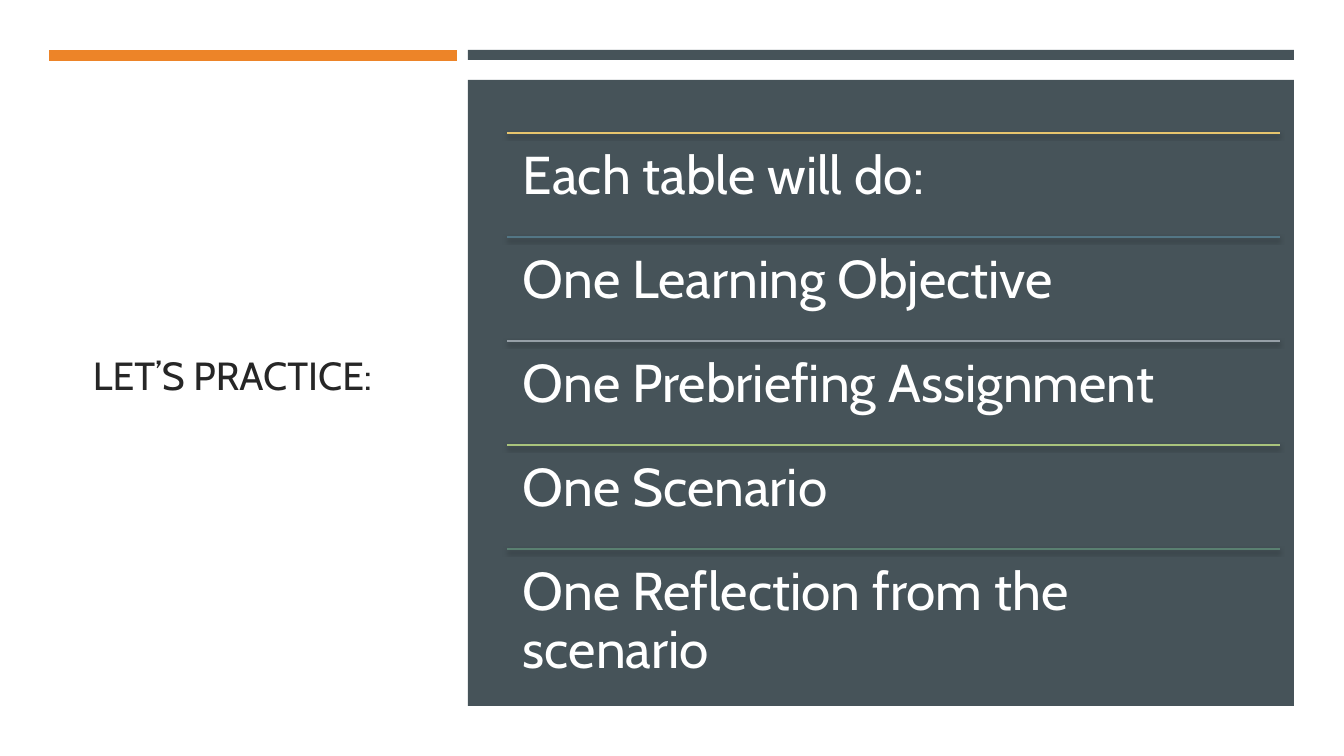
import pptx
import pptx.util
import pptx.dml.color
import pptx.enum.shapes
import pptx.enum.text
import pptx.oxml

PX = 914400 / 100.8
RGB = pptx.dml.color.RGBColor
WHITE = RGB(0xFF, 0xFF, 0xFF)
INK = RGB(0x26, 0x26, 0x26)
ORANGE = RGB(0xED, 0x84, 0x28)
SLATE = RGB(0x46, 0x53, 0x59)
GOLD = RGB(0xE6, 0xC4, 0x6D)
BLUE = RGB(0x53, 0x76, 0x85)
GREY = RGB(0x96, 0x9F, 0xA7)
LIME = RGB(0xA9, 0xC3, 0x7C)
GREEN = RGB(0x5A, 0x80, 0x71)

RULE_SHADOW = (
    '<a:effectLst xmlns:a="http://schemas.openxmlformats.org/drawingml/2006/main">'
    '<a:outerShdw blurRad="38100" dist="25400" dir="5400000" rotWithShape="0">'
    '<a:srgbClr val="000000"><a:alpha val="55000"/></a:srgbClr>'
    '</a:outerShdw></a:effectLst>'
)


def px(*lengths):
    """Turn pixel lengths into EMU."""
    return [pptx.util.Emu(round(length * PX)) for length in lengths]


def write(shape, text, *, size, color, anchor, inset, line_spacing=1.0):
    frame = shape.text_frame
    frame.word_wrap = True
    frame.auto_size = pptx.enum.text.MSO_AUTO_SIZE.NONE
    frame.vertical_anchor = anchor
    (frame.margin_left, frame.margin_top,
     frame.margin_right, frame.margin_bottom) = px(*inset)
    paragraph = frame.paragraphs[0]
    paragraph.alignment = pptx.enum.text.PP_ALIGN.LEFT
    paragraph.line_spacing = line_spacing
    run = paragraph.add_run()
    run.text = text
    run.font.name = "Cabin"
    run.font.size = pptx.util.Pt(size)
    run.font.color.rgb = color


deck = pptx.Presentation()
deck.slide_width, deck.slide_height = px(1344, 756)
slide = deck.slides.add_slide(deck.slide_layouts[5])
slide.background.fill.solid()
slide.background.fill.fore_color.rgb = WHITE

heading = slide.shapes.title
heading.left, heading.top, heading.width, heading.height = px(83, 115, 337, 519)
write(heading, "LET’S PRACTICE:", size=28, color=INK,
      anchor=pptx.enum.text.MSO_ANCHOR.MIDDLE, inset=(10, 5, 10, 5))

# Accent bars and the panel behind the tasks
for left, top, width, height, color in [
    (49, 50, 408, 11, ORANGE),
    (468, 50, 826, 10, SLATE),
    (468, 80, 826, 626, SLATE),
]:
    block = slide.shapes.add_shape(
        pptx.enum.shapes.MSO_SHAPE.RECTANGLE, *px(left, top, width, height))
    block.shadow.inherit = False
    block.fill.solid()
    block.fill.fore_color.rgb = color
    block.line.fill.background()

TASKS = [
    ("Each table will do:", GOLD),
    ("One Learning Objective", BLUE),
    ("One Prebriefing Assignment", GREY),
    ("One Scenario", LIME),
    ("One Reflection from the scenario", GREEN),
]
TASK_LEFT, TASK_TOP, TASK_WIDTH, TASK_HEIGHT = 507, 133, 773, 104

for index, (task, color) in enumerate(TASKS):
    top = TASK_TOP + index * TASK_HEIGHT
    rule = slide.shapes.add_connector(
        pptx.enum.shapes.MSO_CONNECTOR.STRAIGHT,
        *px(TASK_LEFT, top, TASK_LEFT + TASK_WIDTH, top))
    rule.line.color.rgb = color
    rule.line.width = pptx.util.Pt(1)
    rule._element.spPr.append(pptx.oxml.parse_xml(RULE_SHADOW))

    task_box = slide.shapes.add_textbox(*px(TASK_LEFT, top, TASK_WIDTH, TASK_HEIGHT))
    write(task_box, task, size=38, color=WHITE, line_spacing=0.9,
          anchor=pptx.enum.text.MSO_ANCHOR.TOP, inset=(16, 16, 16, 16))

deck.save("out.pptx")
